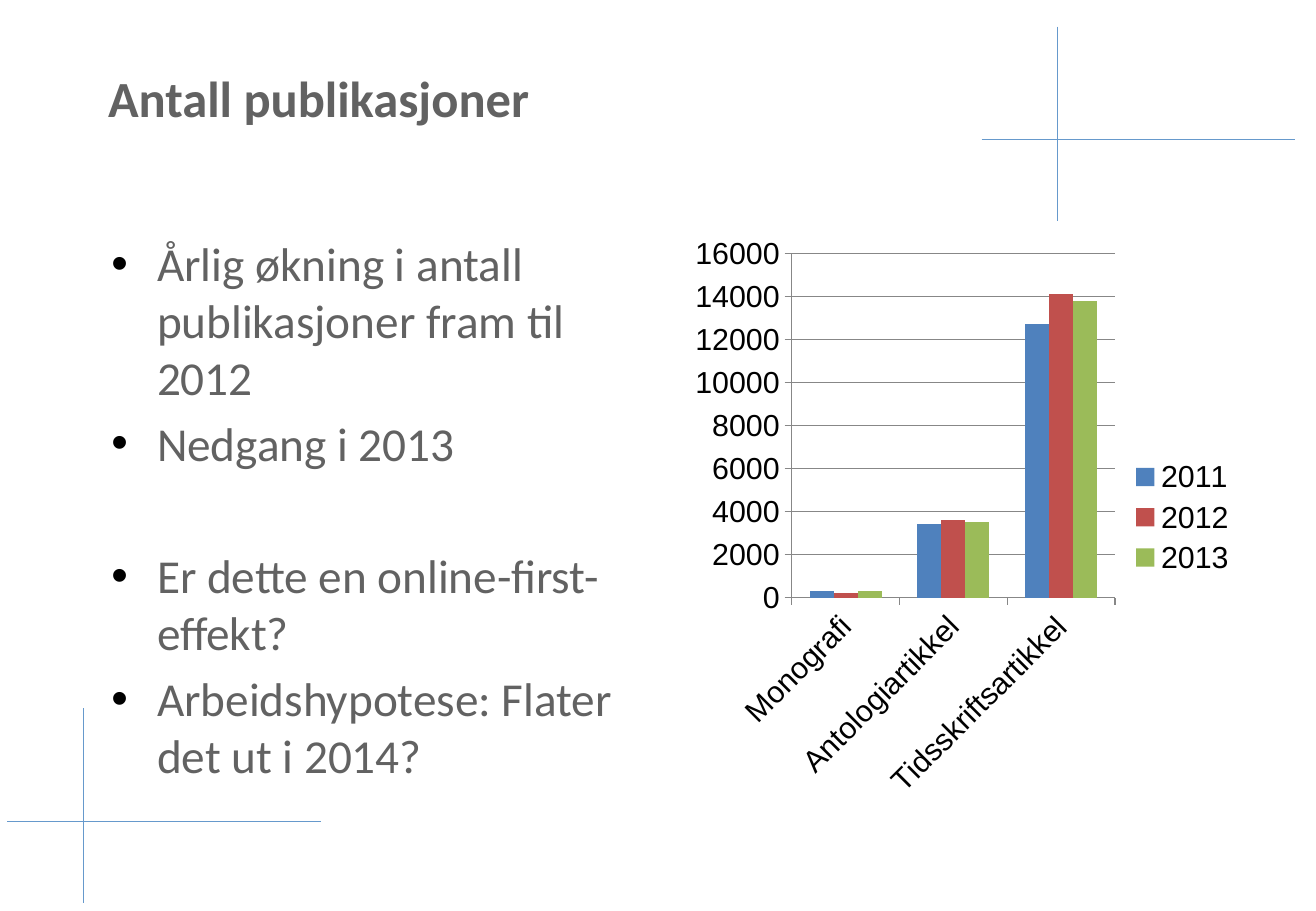
from lxml import etree
from pptx import Presentation
from pptx.chart.data import CategoryChartData
from pptx.dml.color import RGBColor
from pptx.enum.chart import XL_CHART_TYPE, XL_LEGEND_POSITION
from pptx.enum.shapes import MSO_CONNECTOR
from pptx.enum.text import MSO_ANCHOR
from pptx.oxml.ns import qn
from pptx.util import Pt

COLUMN = XL_CHART_TYPE.COLUMN_CLUSTERED
RIGHT = XL_LEGEND_POSITION.RIGHT
STRAIGHT = MSO_CONNECTOR.STRAIGHT
BOTTOM = MSO_ANCHOR.BOTTOM

COLORS = {
    "text": "626262", "black": "000000", "cross": "6699CC", "axis": "878787",
    "2011": "4F81BD", "2012": "C0504D", "2013": "9BBB59",
}


def color(name):
    return RGBColor.from_string(COLORS[name])


def add_text_box(left, top, width, height):
    box = slide.shapes.add_textbox(Pt(left), Pt(top), Pt(width), Pt(height))
    box.text_frame.word_wrap = True
    return box.text_frame


presentation = Presentation()
presentation.slide_width = Pt(780)
presentation.slide_height = Pt(540)
slide = presentation.slides.add_slide(presentation.slide_layouts[6])

# Corner crosses: left and top of each, with arms of equal size
for left, top in [(581.8, 15.8), (4.3, 419.8)]:
    center_x, center_y = left + 45, top + 67
    for x1, y1, x2, y2 in [
        (center_x, top, center_x, top + 115.2),
        (left, center_y, left + 186, center_y),
    ]:
        line = slide.shapes.add_connector(STRAIGHT, Pt(x1), Pt(y1), Pt(x2), Pt(y2))
        line.line.color.rgb = color("cross")
        line.line.width = Pt(0.75)
        etree.SubElement(line._element.spPr, qn("a:effectLst"))

# Title
title = add_text_box(64.1, 39.6, 557.3, 52.6)
title.vertical_anchor = BOTTOM
title.margin_left = title.margin_top = 0
title.margin_bottom = Pt(16.6)
paragraph = title.paragraphs[0]
paragraph.text = "Antall publikasjoner"
paragraph.font.name = "Calibri"
paragraph.font.size = Pt(30)
paragraph.font.bold = True
paragraph.font.color.rgb = color("text")

# Bullet list: text and space before
bullets = [
    ("Årlig økning i antall publikasjoner fram til 2012", 0),
    ("Nedgang i 2013", 5.6),
    ("Er dette en online-first-effekt?", 45),
    ("Arbeidshypotese: Flater det ut i 2014?", 5.6),
]
body = add_text_box(59, 135.4, 334.8, 347)
for index, (text, space_before) in enumerate(bullets):
    paragraph = body.add_paragraph() if index else body.paragraphs[0]
    paragraph.text = text
    properties = paragraph._p.get_or_add_pPr()
    properties.set("marL", str(Pt(27)))
    properties.set("indent", str(-Pt(27)))
    bullet_color = etree.SubElement(properties, qn("a:buClr"))
    etree.SubElement(bullet_color, qn("a:srgbClr"), val=COLORS["black"])
    etree.SubElement(properties, qn("a:buFont"), typeface="Arial")
    etree.SubElement(properties, qn("a:buChar"), char="•")
    if space_before:
        paragraph.space_before = Pt(space_before)
    paragraph.font.name = "Calibri"
    paragraph.font.size = Pt(28)
    paragraph.font.color.rgb = color("text")

# Publications per type and year
publications = {
    "2011": (300, 3400, 12700),
    "2012": (200, 3600, 14100),
    "2013": (300, 3500, 13800),
}
chart_data = CategoryChartData()
chart_data.categories = ["Monografi", "Antologiartikkel", "Tidsskriftsartikkel"]
for year, counts in publications.items():
    chart_data.add_series(year, counts)
chart = slide.shapes.add_chart(
    COLUMN, Pt(405.4), Pt(133.2), Pt(334.8), Pt(347), chart_data).chart
chart.has_title = False
chart.font.name = "Arial"
chart.font.size = Pt(18)
chart.font.color.rgb = color("black")
chart.has_legend = True
chart.legend.position = RIGHT
chart.legend.include_in_layout = False

plot = chart.plots[0]
plot.gap_width = 150
plot.overlap = 0
plot.vary_by_categories = False
for series in plot.series:
    series.format.fill.solid()
    series.format.fill.fore_color.rgb = color(series.name)

# Axes
value_axis = chart.value_axis
value_axis.minimum_scale = 0
value_axis.maximum_scale = 16000
value_axis.major_unit = 2000
value_axis.has_major_gridlines = True
for element in (value_axis, chart.category_axis, value_axis.major_gridlines):
    element.format.line.color.rgb = color("axis")
    element.format.line.width = Pt(0.75)
category_labels = chart.category_axis.tick_labels
category_labels.font.size = Pt(18)
label_body = chart.category_axis._element.find(qn("c:txPr")).find(qn("a:bodyPr"))
label_body.set("rot", "-2700000")

presentation.save("out.pptx")
